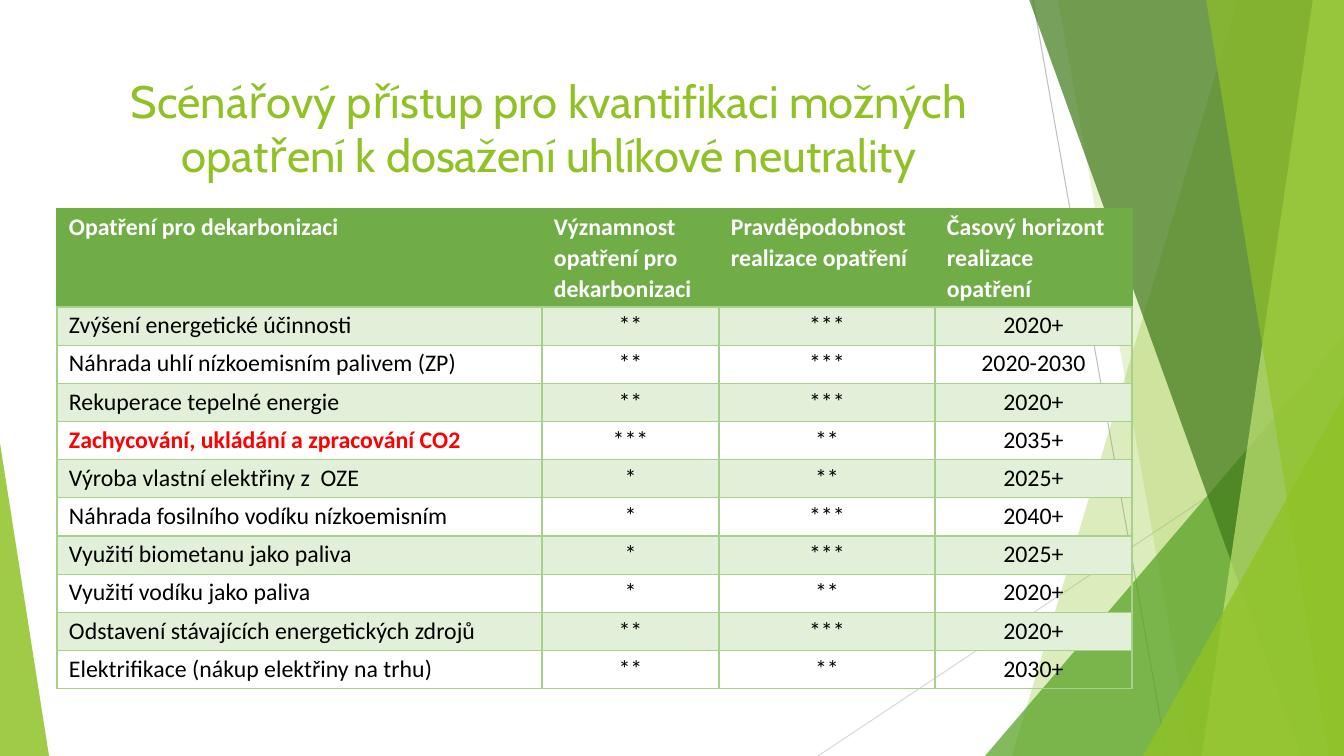
from dataclasses import dataclass

from lxml import etree
from pptx import Presentation
from pptx import util as u
from pptx.dml.color import RGBColor
from pptx.enum import shapes, text
from pptx.oxml import ns

EMU_PER_PX = 914400 / 100.8
WIDTH, HEIGHT = 1344, 756


@dataclass(frozen=True)
class Theme:
    """Colours, fonts and type sizes of the slide."""
    lime: str = "90C226"
    pale_lime: str = "C0E474"
    green: str = "54A021"
    dark_green: str = "3F7819"
    header: str = "70AD47"
    band: str = "E2EFD9"
    border: str = "A8D08D"
    white: str = "FFFFFF"
    black: str = "000000"
    red: str = "FF0000"
    line: str = "BFBFBF"
    light_line: str = "D9D9D9"
    title_font: str = "Cabin"
    table_font: str = "Calibri"
    title_size: float = 32.4
    table_size: float = 17


THEME = Theme()

COLUMN_WIDTHS = (485, 177, 216, 197)
HEADER_HEIGHT, BODY_HEIGHT = 98, 382
HEADINGS = (
    "Opatření pro dekarbonizaci",
    "Významnost opatření pro dekarbonizaci",
    "Pravděpodobnost realizace opatření",
    "Časový horizont realizace opatření",
)
HIGHLIGHTED = "Zachycování, ukládání a zpracování CO2"
MEASURES = (
    ("Zvýšení energetické účinnosti", "**", "***", "2020+"),
    ("Náhrada uhlí nízkoemisním palivem (ZP)", "**", "***", "2020-2030"),
    ("Rekuperace tepelné energie", "**", "***", "2020+"),
    (HIGHLIGHTED, "***", "**", "2035+"),
    ("Výroba vlastní elektřiny z  OZE", "*", "**", "2025+"),
    ("Náhrada fosilního vodíku nízkoemisním", "*", "***", "2040+"),
    ("Využití biometanu jako paliva", "*", "***", "2025+"),
    ("Využití vodíku jako paliva", "*", "**", "2020+"),
    ("Odstavení stávajících energetických zdrojů", "**", "***", "2020+"),
    ("Elektrifikace (nákup elektřiny na trhu)", "**", "**", "2030+"),
)


def px(length):
    """Turn pixels into EMU."""
    return u.Emu(round(length * EMU_PER_PX))


def set_format(target, values):
    """Set every attribute named in a dict of format values."""
    for name, value in values.items():
        setattr(target, name, value)


def write(paragraph, wording, font, size, color, bold=False):
    """Add one formatted run to a paragraph."""
    run = paragraph.add_run()
    run.text = wording
    set_format(run.font, {"name": font, "size": u.Pt(size), "bold": bold})
    run.font.color.rgb = RGBColor.from_string(color)


def paint(shape, color, opacity):
    """Give a shape a translucent fill without outline or shadow."""
    shape.shadow.inherit = False
    shape.line.fill.background()
    shape.fill.solid()
    shape.fill.fore_color.rgb = RGBColor.from_string(color)
    color_element = shape.fill._xPr.find(".//" + ns.qn("a:srgbClr"))
    etree.SubElement(color_element, ns.qn("a:alpha"), val=str(opacity * 1000))


def add_thin_line(slide, start, end, color):
    """Draw a thin straight line."""
    connector = slide.shapes.add_connector(
        shapes.MSO_CONNECTOR.STRAIGHT, *map(px, start + end))
    connector.line.width = u.Pt(0.75)
    connector.line.color.rgb = RGBColor.from_string(color)
    etree.SubElement(connector._element.spPr, ns.qn("a:effectLst"))


def add_side_band(slide, top_left, bottom_left, color, opacity):
    """Draw a full-height band from a slanted left edge to the slide's right edge."""
    builder = slide.shapes.build_freeform(top_left, -1, EMU_PER_PX)
    builder.add_line_segments(
        [(WIDTH, -1), (WIDTH, HEIGHT), (bottom_left, HEIGHT)], close=True)
    paint(builder.convert_to_shape(), color, opacity)


def add_corner(slide, left, top, width, apex, color, opacity):
    """Draw a triangle that stands on the slide's bottom edge."""
    triangle = slide.shapes.add_shape(
        shapes.MSO_SHAPE.ISOSCELES_TRIANGLE,
        *map(px, (left, top, width, HEIGHT - top)))
    triangle.adjustments[0] = apex
    paint(triangle, color, opacity)


def add_decoration(slide):
    """Draw the green facets behind the content, back to front."""
    add_thin_line(slide, (1033, 0), (1167, HEIGHT), THEME.line)
    add_thin_line(slide, (WIDTH, 406), (818, HEIGHT), THEME.light_line)
    add_side_band(slide, 1238, 1012, THEME.lime, 30)
    add_side_band(slide, 1058, 1192, THEME.lime, 20)
    add_corner(slide, 985, 336, 359, 1, THEME.green, 72)
    add_side_band(slide, 1029, 1301, THEME.dark_green, 70)
    add_side_band(slide, 1313, 1202, THEME.pale_lime, 70)
    add_side_band(slide, 1206, 1329, THEME.lime, 65)
    add_corner(slide, 1143, 396, 201, 1, THEME.lime, 80)
    add_corner(slide, 0, 443, 49, 0, THEME.lime, 85)


def add_title(slide, wording):
    """Add the centred title."""
    frame = slide.shapes.add_textbox(*map(px, (75, 68, 948, 145))).text_frame
    set_format(frame, {"word_wrap": True,
                       "vertical_anchor": text.MSO_ANCHOR.TOP})
    paragraph = frame.paragraphs[0]
    paragraph.alignment = text.PP_ALIGN.CENTER
    write(paragraph, wording, THEME.title_font, THEME.title_size, THEME.lime)


def add_borders(cell, color):
    """Draw a one-point border on all sides of a cell."""
    properties = cell._tc.get_or_add_tcPr()
    for side in ("lnL", "lnR", "lnT", "lnB"):
        line = etree.SubElement(properties, ns.qn("a:" + side), w=str(u.Pt(1)))
        fill = etree.SubElement(line, ns.qn("a:solidFill"))
        etree.SubElement(fill, ns.qn("a:srgbClr"), val=color)


def fill_cell(cell, wording, color, bold, align, fill, border):
    """Write and format one table cell."""
    set_format(cell, {"margin_left": px(12), "margin_right": px(12),
                      "margin_top": px(2), "margin_bottom": 0})
    add_borders(cell, border)
    if fill:
        cell.fill.solid()
        cell.fill.fore_color.rgb = RGBColor.from_string(fill)
    else:
        cell.fill.background()
    paragraph = cell.text_frame.paragraphs[0]
    set_format(paragraph, {"alignment": align, "line_spacing": 1.07,
                           "space_after": u.Pt(8)})
    write(paragraph, wording, THEME.table_font, THEME.table_size, color, bold)


def add_measures_table(slide):
    """Add the table of measures with a header and alternating row fills."""
    rows = (HEADINGS,) + MEASURES
    table = slide.shapes.add_table(
        len(rows), len(HEADINGS), px(57), px(209), px(sum(COLUMN_WIDTHS)),
        px(HEADER_HEIGHT + BODY_HEIGHT)).table
    set_format(table, {"first_row": False, "horz_banding": False})
    for column, width in zip(table.columns, COLUMN_WIDTHS):
        column.width = px(width)
    for row_index, wordings in enumerate(rows):
        header = row_index == 0
        table.rows[row_index].height = px(
            HEADER_HEIGHT if header else BODY_HEIGHT / len(MEASURES))
        band = THEME.band if row_index % 2 else None
        for column_index, wording in enumerate(wordings):
            highlighted = wording == HIGHLIGHTED
            body_color = THEME.red if highlighted else THEME.black
            left = header or column_index == 0
            fill_cell(
                table.cell(row_index, column_index), wording,
                color=THEME.white if header else body_color,
                bold=header or highlighted,
                align=text.PP_ALIGN.LEFT if left else text.PP_ALIGN.CENTER,
                fill=THEME.header if header else band,
                border=THEME.header if header else THEME.border)


def main():
    """Build the slide and save it."""
    presentation = Presentation()
    set_format(presentation, {"slide_width": px(WIDTH), "slide_height": px(HEIGHT)})
    slide = presentation.slides.add_slide(presentation.slide_layouts[6])
    add_decoration(slide)
    add_title(slide, "Scénářový přístup pro kvantifikaci možných "
                     "opatření k dosažení uhlíkové neutrality")
    add_measures_table(slide)
    presentation.save("out.pptx")


if __name__ == "__main__":
    main()
